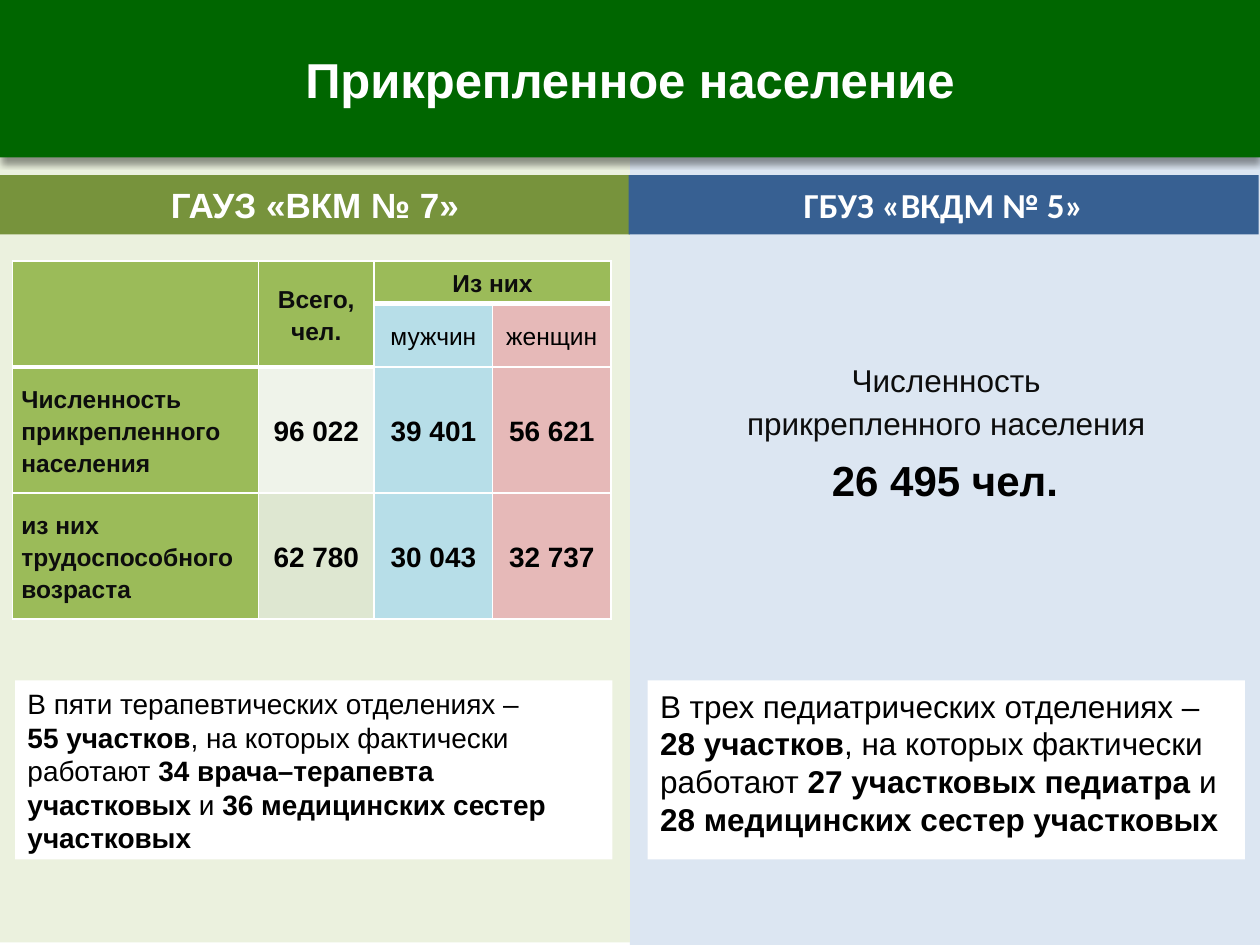
from dataclasses import dataclass
from typing import Optional

from lxml import etree
from pptx import Presentation
from pptx import util as u
from pptx.dml.color import RGBColor
from pptx.enum import shapes, text
from pptx.oxml.ns import qn

PX = u.Inches(1) // 100  # lengths are in px, 100 to the inch
CENTER, LEFT = text.PP_ALIGN.CENTER, text.PP_ALIGN.LEFT


@dataclass(frozen=True)
class Theme:
    font: str = "Arial"
    alt_font: str = "Calibri"
    white: str = "FFFFFF"
    black: str = "000000"
    ink: str = "0D0D0D"
    banner: str = "006600"
    adult_panel: str = "EBF1DE"
    adult_head: str = "77933C"
    child_panel: str = "DCE6F2"
    child_head: str = "376092"
    header: str = "9BBB59"
    men: str = "B7DEE8"
    women: str = "E6B9B8"
    total_light: str = "EFF3EA"
    total_dark: str = "DEE7D1"
    title: int = 28
    number: int = 24
    heading: int = 20
    body: int = 18
    small: int = 16
    table: int = 14


T = Theme()


@dataclass(frozen=True)
class Box:
    left: int
    top: int
    width: int
    height: int

    def emu(self) -> list[int]:
        return [v * PX for v in (self.left, self.top, self.width, self.height)]


@dataclass(frozen=True)
class Style:
    size: int
    color: str = T.black
    bold: bool = False
    font: str = T.font
    align: text.PP_ALIGN = CENTER
    spacing: Optional[float] = None


@dataclass(frozen=True)
class Clinic:
    name: str
    font: str
    panel: Box
    panel_fill: str
    head: Box
    head_fill: str
    staff: Box
    staff_size: int
    staff_text: list[str]  # plain and bold parts in turn


@dataclass(frozen=True)
class Cell:
    row: int
    col: int
    words: str
    fill: str
    style: Style
    rows: int = 1
    cols: int = 1


def paint(part, color: str) -> None:
    part.fill.solid()
    part.fill.fore_color.rgb = RGBColor.from_string(color)


def format_run(run, style: Style, bold: bool) -> None:
    run.font.name, run.font.size, run.font.bold = style.font, u.Pt(style.size), bold
    run.font.color.rgb = RGBColor.from_string(style.color)


def write(frame, words: str, style: Style) -> None:
    frame.word_wrap = True
    frame.text = words.replace("\n", "\v")
    for paragraph in frame.paragraphs:
        paragraph.alignment = style.align
        paragraph.line_spacing = style.spacing
        for run in paragraph.runs:
            format_run(run, style, style.bold)


def add_panel(slide, box: Box, fill: str):
    panel = slide.shapes.add_shape(shapes.MSO_SHAPE.RECTANGLE, *box.emu())
    panel.shadow.inherit = False
    paint(panel, fill)
    panel.line.fill.background()
    return panel


def add_label(slide, box: Box, words: str, style: Style) -> None:
    write(slide.shapes.add_textbox(*box.emu()).text_frame, words, style)


def add_banner(slide, box: Box, words: str) -> None:
    banner = slide.shapes.title
    banner.left, banner.top, banner.width, banner.height = box.emu()
    paint(banner, T.banner)
    write(banner.text_frame, words, Style(T.title, T.white, True))
    banner.text_frame.vertical_anchor = text.MSO_ANCHOR.MIDDLE
    # Soft shadow straight down
    banner.shadow.inherit = False
    effects = banner._element.spPr.find(qn("a:effectLst"))
    shadow = etree.SubElement(effects, qn("a:outerShdw"), blurRad=str(u.Pt(4)),
                              dist=str(u.Pt(3)), dir="5400000", rotWithShape="0")
    color = etree.SubElement(shadow, qn("a:srgbClr"), val=T.black)
    etree.SubElement(color, qn("a:alpha"), val="40000")
    # The banner lies above the panels
    slide.shapes._spTree.append(banner._element)


def add_head(slide, clinic: Clinic) -> None:
    head = add_panel(slide, clinic.head, clinic.head_fill)
    write(head.text_frame, clinic.name, Style(T.heading, T.white, True, clinic.font))
    head.text_frame.vertical_anchor = text.MSO_ANCHOR.MIDDLE


def add_staff(slide, clinic: Clinic) -> None:
    frame = add_panel(slide, clinic.staff, T.white).text_frame
    frame.word_wrap = True
    frame.vertical_anchor = text.MSO_ANCHOR.TOP
    paragraph = frame.paragraphs[0]
    paragraph.alignment = LEFT
    style = Style(clinic.staff_size)
    for index, words in enumerate(clinic.staff_text):
        run = paragraph.add_run()
        run.text = words
        format_run(run, style, index % 2 == 1)
        if index == 0:
            paragraph.add_line_break()
    for line_break in paragraph._p.findall(qn("a:br")):
        etree.SubElement(line_break, qn("a:rPr"), sz=str(style.size * 100))


def add_borders(cell, bottom: int) -> None:
    for side, width in (("L", 1), ("R", 1), ("T", 1), ("B", bottom)):
        line = etree.SubElement(cell._tc.get_or_add_tcPr(), qn(f"a:ln{side}"),
                                w=str(u.Pt(width)))
        solid = etree.SubElement(line, qn("a:solidFill"))
        etree.SubElement(solid, qn("a:srgbClr"), val=T.white)


def add_population(slide, box: Box, widths: list[int], heights: list[int],
                   cells: list[Cell]) -> None:
    table = slide.shapes.add_table(len(heights), len(widths), *box.emu()).table
    table.first_row = table.horz_banding = False
    for column, width in zip(table.columns, widths):
        column.width = width * PX
    for row, height in zip(table.rows, heights):
        row.height = height * PX
    for item in cells:
        last_row, last_col = item.row + item.rows - 1, item.col + item.cols - 1
        for r in range(item.row, last_row + 1):
            for c in range(item.col, last_col + 1):
                cell = table.cell(r, c)
                cell.margin_left = cell.margin_right = 7 * PX
                cell.margin_top = cell.margin_bottom = 0
                add_borders(cell, 3 if item.row == 0 else 1)
                paint(cell, item.fill)
        origin = table.cell(item.row, item.col)
        if item.rows * item.cols > 1:
            origin.merge(table.cell(last_row, last_col))
        origin.vertical_anchor = text.MSO_ANCHOR.MIDDLE
        write(origin.text_frame, item.words, item.style)


CLINICS = [
    Clinic("ГБУЗ «ВКДМ № 5»", T.alt_font, Box(500, 123, 500, 627), T.child_panel,
           Box(499, 139, 500, 47), T.child_head, Box(514, 540, 474, 142), T.body,
           ["В трех педиатрических отделениях – ", "28 участков",
            ", на которых фактически работают ", "27 участковых педиатра ", "и ",
            "28 медицинских сестер участковых"]),
    Clinic("ГАУЗ «ВКМ № 7»", T.font, Box(0, 123, 500, 625), T.adult_panel,
           Box(0, 139, 500, 47), T.adult_head, Box(12, 540, 474, 142), T.small,
           ["В пяти терапевтических отделениях – ", "55 участков",
            ", на которых фактически работают ", "34 врача–терапевта участковых ", "и ",
            "36 медицинских сестер участковых"]),
]

HEADER = Style(T.table, T.ink, True, spacing=1.15)
GENDER = Style(T.table, spacing=1.15)
ROW_NAME = Style(T.table, T.ink, True, align=LEFT, spacing=1.15)
COUNT = Style(T.small, bold=True, spacing=1.15)
COUNTS = [
    ("Численность прикрепленного населения", T.total_light, ["96 022", "39 401", "56 621"]),
    ("из них трудоспособного возраста", T.total_dark, ["62 780", "30 043", "32 737"]),
]


def population_cells() -> list[Cell]:
    cells = [Cell(0, 0, "", T.header, HEADER, rows=2),
             Cell(0, 1, "Всего, чел.", T.header, HEADER, rows=2),
             Cell(0, 2, "Из них", T.header, HEADER, cols=2),
             Cell(1, 2, "мужчин", T.men, GENDER), Cell(1, 3, "женщин", T.women, GENDER)]
    for row, (name, total_fill, counts) in enumerate(COUNTS, 2):
        cells.append(Cell(row, 0, name, T.header, ROW_NAME))
        fills = (total_fill, T.men, T.women)
        cells += [Cell(row, col, count, fill, COUNT)
                  for col, (count, fill) in enumerate(zip(counts, fills), 1)]
    return cells


def main() -> None:
    deck = Presentation()
    deck.slide_width, deck.slide_height = 1000 * PX, 750 * PX
    slide = deck.slides.add_slide(deck.slide_layouts[5])
    # Background halves and title
    for clinic in CLINICS:
        add_panel(slide, clinic.panel, clinic.panel_fill)
    add_banner(slide, Box(0, 0, 1000, 125), "Прикрепленное население")
    # Adult population by sex
    add_population(slide, Box(10, 207, 475, 284), [195, 92, 94, 94],
                   [34, 50, 100, 100], population_cells())
    # Clinic names and staff
    for clinic in reversed(CLINICS):
        add_head(slide, clinic)
        add_staff(slide, clinic)
    # Child population
    add_label(slide, Box(500, 356, 500, 50), "26 495 чел.", Style(T.number, bold=True))
    add_label(slide, Box(502, 277, 498, 80), "Численность\nприкрепленного населения",
              Style(T.body, T.ink, spacing=1.15))
    deck.save("out.pptx")


if __name__ == "__main__":
    main()
